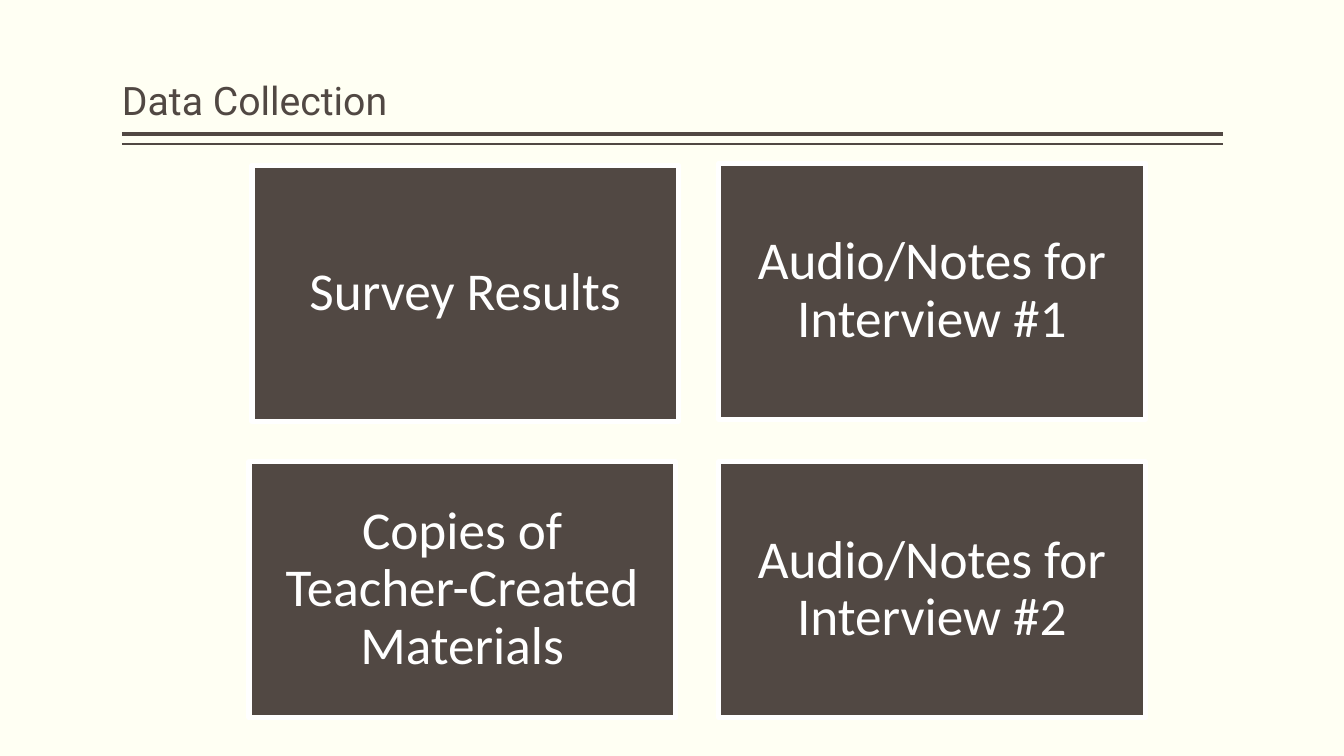
"""Build the Data Collection slide: a ruled title above four labelled boxes."""
import pptx
import pptx.dml.color
import pptx.enum.shapes
import pptx.enum.text
import pptx.oxml.ns
import pptx.util
from lxml import etree

Inches, Pt = pptx.util.Inches, pptx.util.Pt
BROWN = pptx.dml.color.RGBColor(0x51, 0x48, 0x43)
WHITE = pptx.dml.color.RGBColor(0xFF, 0xFF, 0xFF)
IVORY = pptx.dml.color.RGBColor(0xFF, 0xFF, 0xF3)

deck = pptx.Presentation()
deck.slide_width, deck.slide_height = Inches(13.33), Inches(7.5)
slide = deck.slides.add_slide(deck.slide_layouts[5])
slide.background.fill.solid()
slide.background.fill.fore_color.rgb = IVORY


def set_text(holder, text, font_name, size, color, align, anchor, side, vertical):
    frame = holder.text_frame
    frame.text = text
    frame.word_wrap = True
    frame.auto_size = pptx.enum.text.MSO_AUTO_SIZE.NONE
    frame.vertical_anchor = anchor
    frame.margin_left = frame.margin_right = Inches(side)
    frame.margin_top = frame.margin_bottom = Inches(vertical)
    paragraph = frame.paragraphs[0]
    paragraph.alignment = align
    paragraph.line_spacing = 0.9
    paragraph.font.name = font_name
    paragraph.font.size = Pt(size)
    paragraph.font.color.rgb = color


title = slide.shapes.title
title.left, title.top = Inches(1.21), Inches(0.08)
title.width, title.height = Inches(10.92), Inches(1.2)
set_text(title, "Data Collection", "Roboto", 28, BROWN,
         pptx.enum.text.PP_ALIGN.LEFT, pptx.enum.text.MSO_ANCHOR.BOTTOM, 0, 0.05)

for rule_y, weight in [(1.33, 3), (1.43, 1)]:
    rule = slide.shapes.add_connector(
        pptx.enum.shapes.MSO_CONNECTOR.STRAIGHT,
        Inches(1.21), Inches(rule_y), Inches(12.13), Inches(rule_y))
    rule.line.color.rgb = BROWN
    rule.line.width = Pt(weight)
    etree.SubElement(rule.element.spPr, pptx.oxml.ns.qn("a:effectLst"))

sources = [
    ("Survey Results", 2.5, 1.64),
    ("Audio/Notes for Interview #1", 7.13, 1.62),
    ("Copies of Teacher-Created Materials", 2.47, 4.58),
    ("Audio/Notes for Interview #2", 7.13, 4.58),
]
for label, left, top in sources:
    box = slide.shapes.add_shape(
        pptx.enum.shapes.MSO_SHAPE.RECTANGLE,
        Inches(left), Inches(top), Inches(4.23), Inches(2.54))
    box.shadow.inherit = False
    box.fill.solid()
    box.fill.fore_color.rgb = BROWN
    box.line.color.rgb = WHITE
    box.line.width = Pt(3.78)
    set_text(box, label, "Calibri", 38, WHITE,
             pptx.enum.text.PP_ALIGN.CENTER, pptx.enum.text.MSO_ANCHOR.MIDDLE, 0.16, 0.16)

deck.save("out.pptx")
